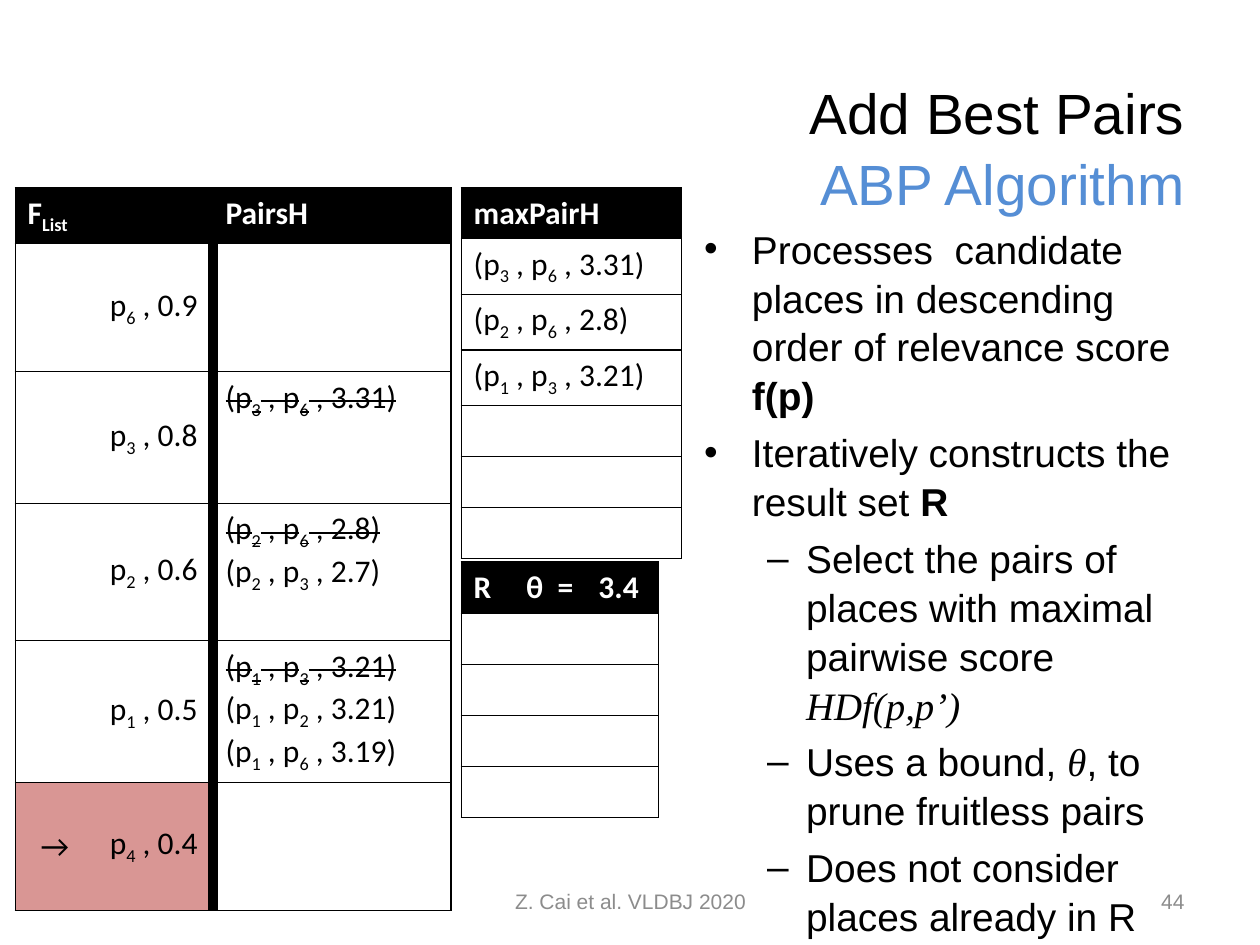
from lxml import etree
from pptx import Presentation
from pptx import util as u
from pptx.dml.color import RGBColor
from pptx.enum import text
from pptx.oxml import ns

BLACK = RGBColor(0x00, 0x00, 0x00)
WHITE = RGBColor(0xFF, 0xFF, 0xFF)
BLUE = RGBColor(0x55, 0x8E, 0xD5)
GREY = RGBColor(0x8C, 0x8C, 0x8C)
ROSE = RGBColor(0xD9, 0x96, 0x94)
LEFT, CENTER, RIGHT = text.PP_ALIGN.LEFT, text.PP_ALIGN.CENTER, text.PP_ALIGN.RIGHT
TOP, MIDDLE = text.MSO_ANCHOR.TOP, text.MSO_ANCHOR.MIDDLE
THIN, THICK = 0.75, 6

# The slide is a grid of 100 columns by 75 rows
presentation = Presentation()
presentation.slide_width, presentation.slide_height = u.Inches(10), u.Inches(7.5)
UNIT = presentation.slide_width // 100
slide = presentation.slides.add_slide(presentation.slide_layouts[6])


def add_text(paragraph, content, size=18, font="Calibri", color=BLACK,
             bold=False, italic=False):
    """Add runs; a leading ~ strikes them out, and _x_ sets x as a subscript."""
    struck = content.startswith("~")
    for index, part in enumerate(content.lstrip("~").split("_")):
        if not part:
            continue
        run = paragraph.add_run()
        run.text = part
        run.font.size, run.font.name = u.Pt(size), font
        run.font.bold, run.font.italic = bold, italic
        run.font.color.rgb = color
        properties = run._r.get_or_add_rPr()
        if struck:
            properties.set("strike", "sngStrike")
        if index % 2:
            properties.set("baseline", "-25000")


def draw_table(contents, left, top, columns, rows, edges, aligns, anchors):
    """Draw a table with a black header; edges are the vertical line widths."""
    frame = slide.shapes.add_table(len(rows), len(columns), int(left * UNIT), int(top * UNIT),
                                   int(sum(columns) * UNIT), int(sum(rows) * UNIT))
    table = frame.table
    table.first_row = table.horz_banding = False
    for column, width in zip(table.columns, columns):
        column.width = int(width * UNIT)
    for row, height in zip(table.rows, rows):
        row.height = int(height * UNIT)
    for r, values in enumerate(contents):
        for c, value in enumerate(values):
            cell = table.cell(r, c)
            cell.fill.solid()
            cell.fill.fore_color.rgb = WHITE if r else BLACK
            cell.vertical_anchor = anchors[c] if r else TOP
            for index, line in enumerate(value.split("\n")):
                frame_text = cell.text_frame
                paragraph = frame_text.add_paragraph() if index else frame_text.paragraphs[0]
                paragraph.alignment = aligns[c] if r or value == "θ  =" else LEFT
                paragraph.font.size = u.Pt(18)
                add_text(paragraph, line, color=WHITE if r == 0 else BLACK, bold=r == 0)
            borders = {"lnL": edges[c], "lnR": edges[c + 1], "lnT": THIN, "lnB": THIN}
            for index, (side, width) in enumerate(borders.items()):
                border = etree.Element(ns.qn("a:" + side), w=str(u.Pt(width)))
                fill = etree.SubElement(border, ns.qn("a:solidFill" if width else "a:noFill"))
                if width:
                    etree.SubElement(fill, ns.qn("a:srgbClr"), val=str(BLACK))
                cell._tc.get_or_add_tcPr().insert(index, border)
    return table


# Title, page number, footer and body boxes
boxes = {}
for name, left, top, width, height, align, anchor in (
        ("title", 21.7, 5.3, 73.3, 12.5, RIGHT, MIDDLE),
        ("number", 71.7, 69.5, 23.3, 4, RIGHT, MIDDLE),
        ("footer", 34.2, 69.5, 31.7, 4, CENTER, MIDDLE),
        ("body", 54.9, 17.2, 42.3, 52.6, LEFT, TOP)):
    shape = slide.shapes.add_textbox(*(int(n * UNIT) for n in (left, top, width, height)))
    shape.text_frame.word_wrap = True
    shape.text_frame.vertical_anchor = anchor
    shape.text_frame.paragraphs[0].alignment = align
    boxes[name] = shape.text_frame

title = boxes["title"].paragraphs[0]
title.line_spacing = 1.05
add_text(title, "Add Best Pairs", size=32.4, font="Arial")
title.add_line_break()
add_text(title, "ABP Algorithm", size=32.4, font="Arial", color=BLUE)
add_text(boxes["number"].paragraphs[0], "44", size=12, font="Arial", color=GREY)
add_text(boxes["footer"].paragraphs[0], "Z. Cai et al. VLDBJ 2020", size=12, font="Arial", color=GREY)

# Result set with its bound
result = draw_table([["R", "θ  =", "3.4"]] + [[""] * 3] * 4, 36.6, 44.6,
                    [3.3, 6.6, 5.8], [4.06] * 5, [THIN] * 4,
                    [LEFT, RIGHT, LEFT], [TOP] * 3)
for r in range(1, 5):
    result.cell(r, 0).merge(result.cell(r, 2))

# Candidate places and their pairs
candidates = draw_table([
    ["F_List_", "", "PairsH"],
    ["", "p_6_ , 0.9", ""],
    ["", "p_3_ , 0.8", "~(p_3_ , p_6_ , 3.31)"],
    ["", "p_2_ , 0.6", "~(p_2_ , p_6_ , 2.8)\n(p_2_ , p_3_ , 2.7)"],
    ["", "p_1_ , 0.5", "~(p_1_ , p_3_ , 3.21)\n(p_1_ , p_2_ , 3.21)\n(p_1_ , p_6_ , 3.19)"],
    ["→", "p_4_ , 0.4", ""]],
    1.2, 14.9, [6.3, 9.4, 18.9], [4.35, 10.2, 10.45, 10.9, 11.2, 10.15],
    [THIN, 0, THICK, THIN], [CENTER, CENTER, LEFT], [MIDDLE, MIDDLE, TOP])
for c in range(2):
    candidates.cell(5, c).fill.fore_color.rgb = ROSE

# Heap of best pairs
draw_table([["maxPairH"], ["(p_3_ , p_6_ , 3.31)"], ["(p_2_ , p_6_ , 2.8)"],
            ["(p_1_ , p_3_ , 3.21)"], [""], [""], [""]],
           36.6, 14.9, [17.5], [4.05] + [4.4] * 3 + [4.05] * 3, [THIN] * 2, [LEFT], [TOP])

# Bullets
STRONG = {"bold": True}
MATH = {"font": "Times New Roman", "italic": True}
bullets = [
    (0, [("Processes  candidate places in descending order of relevance score ", {}),
         ("f(p)", STRONG)]),
    (0, [("Iteratively constructs the result set ", {}), ("R", STRONG)]),
    (1, [("Select the pairs of places with maximal pairwise score ", {}), ("HDf(p,p’)", MATH)]),
    (1, [("Uses a bound, ", {}), ("θ", MATH), (", to prune fruitless pairs", {})]),
    (1, [("Does not consider places already in R", {})]),
]
for index, (level, parts) in enumerate(bullets):
    paragraph = boxes["body"].add_paragraph() if index else boxes["body"].paragraphs[0]
    paragraph.level = level
    paragraph.line_spacing = 1.05
    paragraph.space_before = u.Pt(4.4 if index else 0)
    margin, indent, mark = ((3.8, -3.8, "•"), (8.1, -3.1, "–"))[level]
    properties = paragraph._p.get_or_add_pPr()
    properties.set("marL", str(int(margin * UNIT)))
    properties.set("indent", str(int(indent * UNIT)))
    etree.SubElement(properties, ns.qn("a:buFont"), typeface="Arial")
    etree.SubElement(properties, ns.qn("a:buChar"), char=mark)
    for content, style in parts:
        add_text(paragraph, content, **{"size": 22.2, "font": "Arial", **style})

presentation.save("out.pptx")
